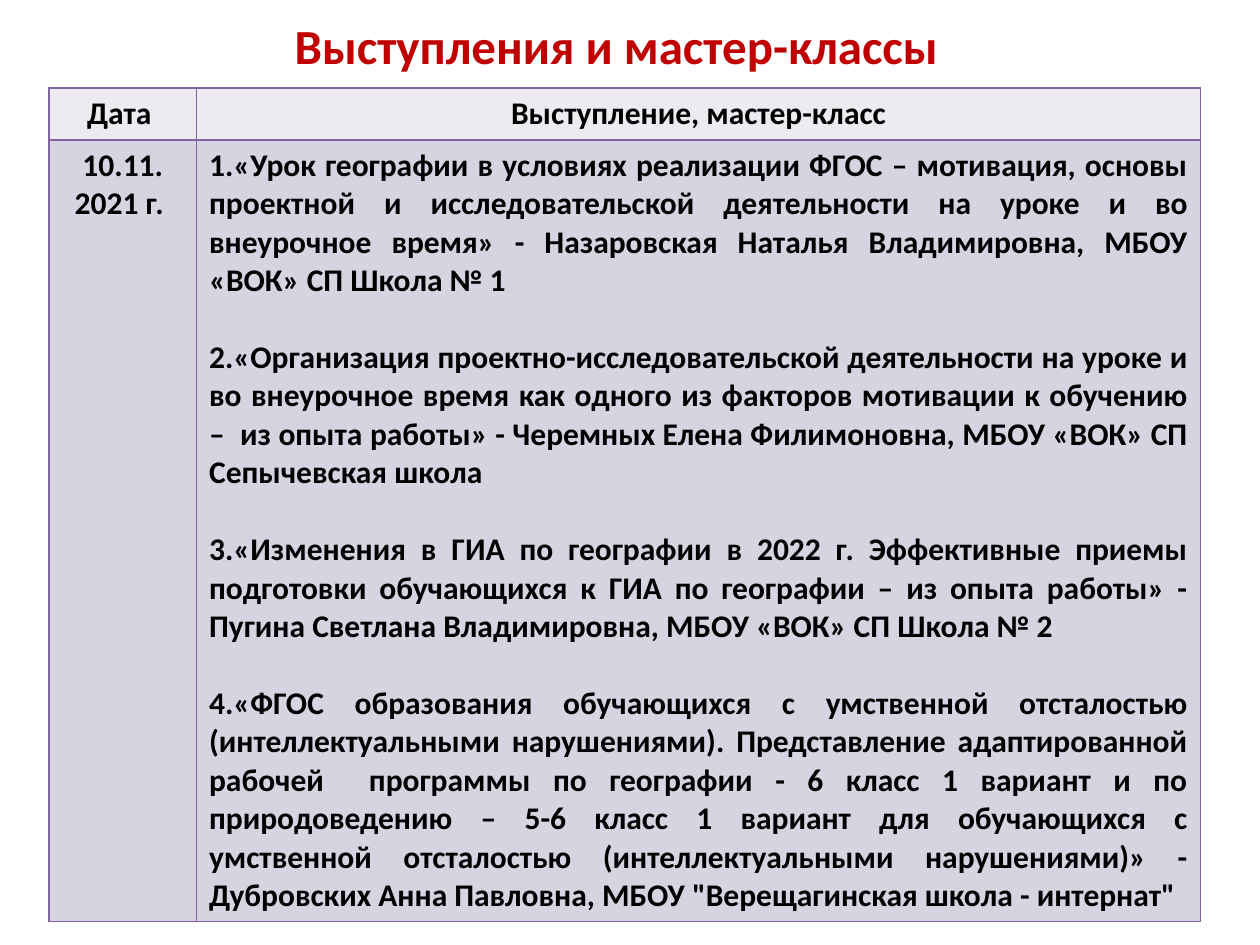
from lxml.etree import SubElement
from pptx import Presentation
from pptx.dml.color import RGBColor
from pptx.enum.text import MSO_ANCHOR, PP_ALIGN
from pptx.oxml.ns import qn
from pptx.util import Inches, Pt

RED = RGBColor(0xC0, 0x00, 0x00)
BLACK = RGBColor(0x00, 0x00, 0x00)
PURPLE = RGBColor(0x80, 0x64, 0xA2)
PALE = RGBColor(0xED, 0xEA, 0xF0)
LILAC = RGBColor(0xD8, 0xD3, 0xE0)

TALKS = [
    "1.«Урок географии в условиях реализации ФГОС – мотивация, основы "
    "проектной и исследовательской деятельности на уроке и во внеурочное "
    "время» - Назаровская Наталья Владимировна, МБОУ «ВОК» СП Школа № 1",
    "2.«Организация проектно-исследовательской деятельности на уроке и во "
    "внеурочное время как одного из факторов мотивации к обучению –  из опыта "
    "работы» - Черемных Елена Филимоновна, МБОУ «ВОК» СП Сепычевская школа",
    "3.«Изменения в ГИА по географии в 2022 г. Эффективные приемы подготовки "
    "обучающихся к ГИА по географии – из опыта работы» - Пугина Светлана "
    "Владимировна, МБОУ «ВОК» СП Школа № 2",
    "4.«ФГОС образования обучающихся с умственной отсталостью "
    "(интеллектуальными нарушениями). Представление адаптированной рабочей  "
    "программы по географии - 6 класс 1 вариант и по природоведению – 5-6 "
    "класс 1 вариант для обучающихся с умственной отсталостью "
    "(интеллектуальными нарушениями)» - Дубровских Анна Павловна, МБОУ "
    "\"Верещагинская школа - интернат\"",
]
HEAD = [["Дата "], ["Выступление, мастер-класс"]]
DATE = ["10.11.", "2021 г. "]


class Deck:
    font = {"name": "Calibri", "bold": True}

    def __init__(self, show):
        self.slide = show.slides.add_slide(show.slide_layouts[5])

    def text(self, frame, lines, size, color, align=PP_ALIGN.CENTER, gap=0):
        """Fill a text frame, one paragraph a line, with gap points between."""
        look = {**self.font, "size": Pt(size)}
        for i, line in enumerate(lines):
            para = frame.add_paragraph() if i else frame.paragraphs[0]
            para.alignment = align
            if i and gap:
                para.space_before = Pt(gap)
            run = para.add_run()
            run.text = line
            for key, value in look.items():
                setattr(run.font, key, value)
            run.font.color.rgb = color

    def title(self, text, left, top, width, height):
        shape = self.slide.shapes.title
        box = {"left": left, "top": top, "width": width, "height": height}
        for key, value in box.items():
            setattr(shape, key, Inches(value))
        shape.text_frame.vertical_anchor = MSO_ANCHOR.MIDDLE
        self.text(shape.text_frame, [text], 28, RED)

    def border(self, cell):
        props = cell._tc.get_or_add_tcPr()
        for side in ("lnL", "lnR", "lnT", "lnB"):
            line = SubElement(props, qn(f"a:{side}"), w=str(Pt(1)))
            fill = SubElement(line, qn("a:solidFill"))
            SubElement(fill, qn("a:srgbClr"), val=str(PURPLE))

    def cell(self, cell, lines, fill, **style):
        self.border(cell)
        cell.fill.solid()
        cell.fill.fore_color.rgb = fill
        self.text(cell.text_frame, lines, 18, BLACK, **style)

    def table(self, left, top, widths, heights):
        size = [Inches(n) for n in (left, top, sum(widths), sum(heights))]
        grid = self.slide.shapes.add_table(len(heights), len(widths), *size).table
        for col, width in zip(grid.columns, widths):
            col.width = Inches(width)
        for row, height in zip(grid.rows, heights):
            row.height = Inches(height)
        return grid


def main():
    show = Presentation()
    show.slide_width, show.slide_height = Inches(10), Inches(7.5)
    deck = Deck(show)
    deck.title("Выступления и мастер-классы", 0.39, 0, 9, 0.72)
    grid = deck.table(0.39, 0.7, [1.17, 7.97], [0.41, 6.2])
    for col, lines in enumerate(HEAD):
        deck.cell(grid.cell(0, col), lines, PALE)
    deck.cell(grid.cell(1, 0), DATE, LILAC)
    deck.cell(grid.cell(1, 1), TALKS, LILAC, align=PP_ALIGN.JUSTIFY, gap=22)
    show.save("out.pptx")


if __name__ == "__main__":
    main()
